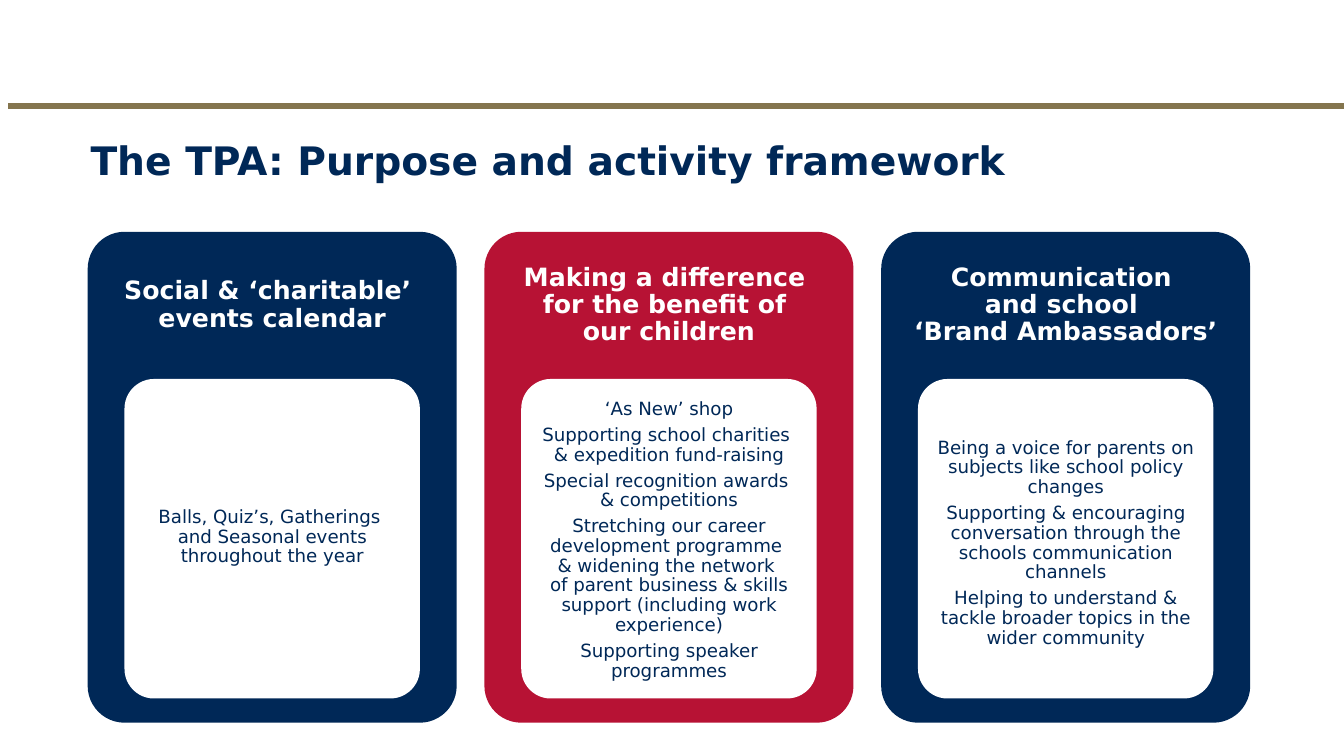
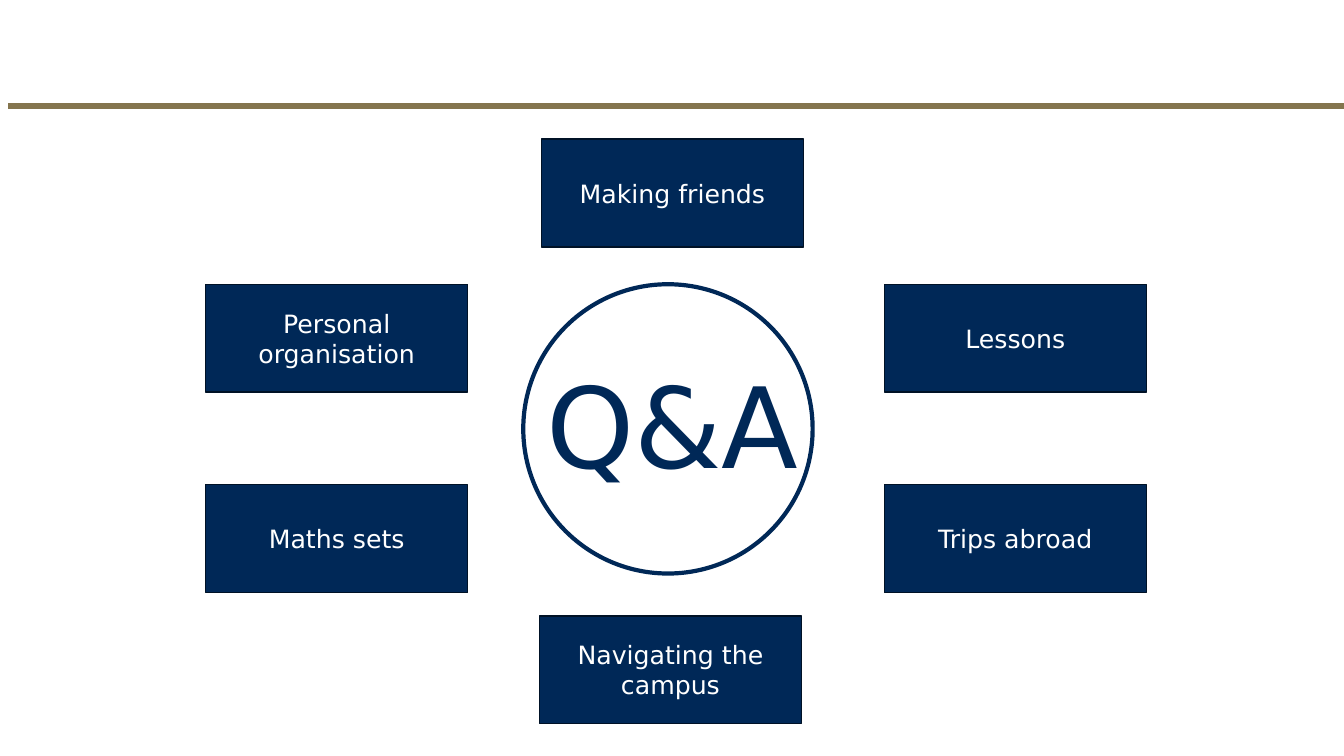
import pptx
import pptx.dml.color
import pptx.enum.shapes
import pptx.enum.text
import pptx.util
from lxml import etree
from pptx.util import Inches

SHAPE = pptx.enum.shapes.MSO_SHAPE
ALIGN = pptx.enum.text.PP_ALIGN
ANCHOR = pptx.enum.text.MSO_ANCHOR
FONT = "DejaVu Sans"
COLORS = {"navy": "002857", "edge": "001226", "red": "B71234",
          "gold": "84754E", "white": "FFFFFF"}

# Content: a newline inside a text is a line break
TITLE = "The TPA: Purpose and activity framework"
PILLARS = [  # heading, colour, top of the body text, body paragraphs
    ("Social & ‘charitable’ \nevents calendar", "navy", 3.81, [
        "Balls, Quiz’s, Gatherings \nand Seasonal events throughout the year"]),
    ("Making a difference \nfor the benefit of \nour children", "red", 3.84, [
        "‘As New’ shop",
        "Supporting school charities \n& expedition fund-raising",
        "Special recognition awards \n& competitions",
        "Stretching our career development programme \n& widening the network "
        "\nof parent business & skills support (including work experience)",
        "Supporting speaker programmes"]),
    ("Communication \nand school \n‘Brand Ambassadors’", "navy", 3.87, [
        "Being a voice for parents on subjects like school policy changes",
        "Supporting & encouraging conversation through the schools "
        "communication channels",
        "Helping to understand & tackle broader topics in the wider community"]),
]
HUB = "Q&A"
TOPICS = [  # text, left, top
    ("Personal organisation", 2.04, 2.82),
    ("Making friends", 5.37, 1.38),
    ("Lessons", 8.77, 2.82),
    ("Trips abroad", 8.77, 4.81),
    ("Navigating the campus", 5.35, 6.11),
    ("Maths sets", 2.04, 4.81),
]


def rgb(name):
    return pptx.dml.color.RGBColor.from_string(COLORS[name])


def write(shape, paragraphs, size, color, bold=False, align=ALIGN.CENTER,
          anchor=ANCHOR.MIDDLE, spacing=0.9, after=0, insets=(0.1, 0.05)):
    frame = shape.text_frame
    frame.word_wrap = True
    frame.vertical_anchor = anchor
    frame.margin_left = frame.margin_right = Inches(insets[0])
    frame.margin_top = frame.margin_bottom = Inches(insets[1])
    for number, text in enumerate(paragraphs):
        paragraph = frame.add_paragraph() if number else frame.paragraphs[0]
        paragraph.alignment = align
        paragraph.line_spacing = spacing
        paragraph.space_after = pptx.util.Pt(after)
        for part, line in enumerate(text.split("\n")):
            if part:
                paragraph.add_line_break()
            run = paragraph.add_run()
            run.text = line
            run.font.name = FONT
            run.font.size = pptx.util.Pt(size)
            run.font.bold = bold
            run.font.color.rgb = rgb(color)


def add_text(slide, box, paragraphs, size, color, **style):
    write(slide.shapes.add_textbox(*map(Inches, box)), paragraphs, size, color, **style)


def add_panel(slide, kind, box, fill=None, line=None, weight=1):
    panel = slide.shapes.add_shape(kind, *map(Inches, box))
    panel.shadow.inherit = False
    if fill:
        panel.fill.solid()
        panel.fill.fore_color.rgb = rgb(fill)
    else:
        panel.fill.background()
    if line:
        panel.line.color.rgb = rgb(line)
        panel.line.width = pptx.util.Pt(weight)
    else:
        panel.line.fill.background()
    return panel


def add_slide(deck):
    """Blank slide with the gold rule that every slide carries."""
    slide = deck.slides.add_slide(deck.slide_layouts[6])
    rule = slide.shapes.add_connector(
        pptx.enum.shapes.MSO_CONNECTOR.STRAIGHT,
        Inches(0.08), Inches(1.05), Inches(13.33), Inches(1.05))
    rule.line.color.rgb = rgb("gold")
    rule.line.width = pptx.util.Pt(4.5)
    etree.SubElement(rule._element.spPr, pptx.oxml.ns.qn("a:effectLst"))
    return slide


def build_framework(deck):
    slide = add_slide(deck)
    add_text(slide, (0.8, 1.36, 11.5, 0.73), [TITLE], 28, "navy", bold=True,
             align=ALIGN.LEFT, anchor=ANCHOR.TOP)
    width, pitch, top = 3.66, 3.935, 2.3
    inner_width, text_width = 2.93, 2.76
    for column, (heading, color, text_top, body) in enumerate(PILLARS):
        left = 0.87 + column * pitch
        inner_left = left + (width - inner_width) / 2
        text_left = left + (width - text_width) / 2
        for box, fill in (((left, top, width, 4.87), color),
                          ((inner_left, 3.76, inner_width, 3.17), "white")):
            add_panel(slide, SHAPE.ROUNDED_RECTANGLE, box, fill).adjustments[0] = 0.1
        add_text(slide, (left, top, width, 1.46), [heading], 18, "white",
                 bold=True, after=6.3, insets=(0.1, 0.1))
        add_text(slide, (text_left, text_top, text_width, 3.04), body, 13, "navy",
                 after=4.55, insets=(0.04, 0.03))


def build_questions(deck):
    slide = add_slide(deck)
    add_text(slide, (1.73, 3.64, 9.88, 0.96), [HUB], 80, "navy", anchor=ANCHOR.TOP)
    for topic, left, top in TOPICS:
        card = add_panel(slide, SHAPE.RECTANGLE, (left, top, 2.6, 1.07), "navy", "edge")
        write(card, [topic], 18, "white", spacing=1)
    add_panel(slide, SHAPE.OVAL, (5.19, 2.82, 2.87, 2.87), line="navy", weight=3)


def main():
    deck = pptx.Presentation()
    deck.slide_width, deck.slide_height = Inches(13.33), Inches(7.5)
    build_framework(deck)
    build_questions(deck)
    deck.save("out.pptx")


if __name__ == "__main__":
    main()
